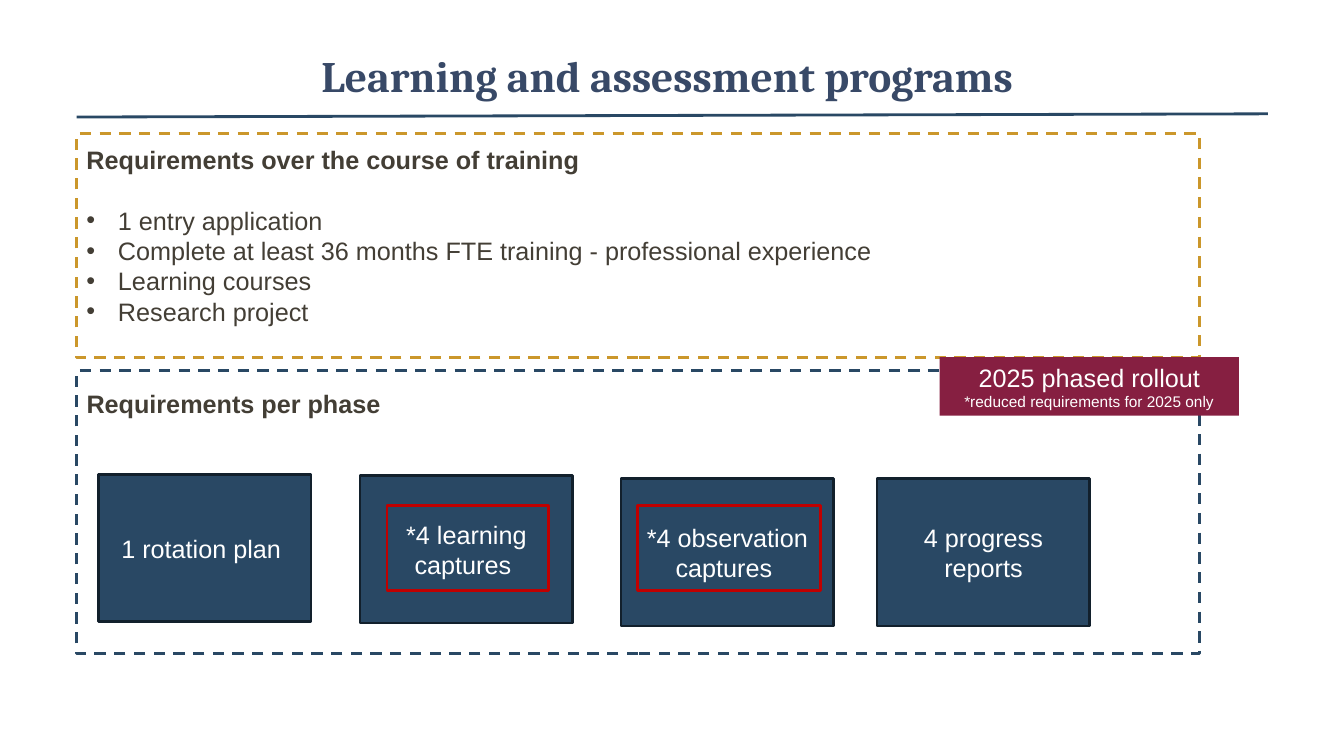
"""Build the slide on learning and assessment programs."""
import dataclasses
from typing import Any, Optional

import pptx
import pptx.dml.color
import pptx.enum.dml
import pptx.enum.shapes
import pptx.enum.text
import pptx.oxml.ns
import pptx.util
from lxml import etree

Pt = pptx.util.Pt
ALIGN = pptx.enum.text.PP_ALIGN
ANCHOR = pptx.enum.text.MSO_ANCHOR
COLORS = {
    "title": "384967", "navy": "294864", "edge": "12202C", "gold": "CB972B",
    "maroon": "861F41", "red": "C00000", "body": "433E35", "white": "FFFFFF",
}


@dataclasses.dataclass
class Line:
    """One paragraph of text and its look."""
    text: str
    size: float = 18
    color: str = "white"
    bold: bool = False
    font: str = "Arial"
    align: Any = ALIGN.CENTER
    bullet: bool = False
    before: float = 0


@dataclasses.dataclass
class Box:
    """A rectangle or text box, in points."""
    left: float
    top: float
    width: float
    height: float
    lines: tuple[Line, ...] = ()
    fill: Optional[str] = None
    edge: Optional[str] = None
    dashed: bool = False


def rgb(name: str) -> pptx.dml.color.RGBColor:
    """Return a named colour."""
    return pptx.dml.color.RGBColor.from_string(COLORS[name])


def set_format(target: Any, values: dict[str, Any]) -> None:
    """Set each attribute of the target from the values."""
    for name, value in values.items():
        setattr(target, name, value)


def place(shape: Any, box: Box) -> None:
    """Move and size a shape to its box."""
    set_format(shape, {name: Pt(getattr(box, name))
                       for name in ("left", "top", "width", "height")})


def add_bullet(para: Any) -> None:
    """Give a paragraph a hanging round bullet."""
    props = para._p.get_or_add_pPr()
    set_format_values = {"marL": str(Pt(22.5)), "indent": str(Pt(-22.5))}
    for name, value in set_format_values.items():
        props.set(name, value)
    for tag, key, value in (("a:buFont", "typeface", "Arial"), ("a:buChar", "char", "•")):
        etree.SubElement(props, pptx.oxml.ns.qn(tag)).set(key, value)


def write(frame: Any, lines: tuple[Line, ...], anchor: Any) -> None:
    """Write the lines into a text frame."""
    set_format(frame, {"word_wrap": True, "vertical_anchor": anchor,
                       "auto_size": pptx.enum.text.MSO_AUTO_SIZE.NONE})
    for index, line in enumerate(lines):
        para = frame.add_paragraph() if index else frame.paragraphs[0]
        para.alignment = line.align
        if line.before:
            para.space_before = Pt(line.before)
        if line.bullet:
            add_bullet(para)
        span = para.add_run()
        span.text = line.text
        set_format(span.font, {"name": line.font, "size": Pt(line.size), "bold": line.bold})
        span.font.color.rgb = rgb(line.color)


def add_box(page: Any, box: Box) -> None:
    """Draw a rectangle with its text."""
    shape = page.shapes.add_shape(pptx.enum.shapes.MSO_SHAPE.RECTANGLE, 0, 0, 0, 0)
    place(shape, box)
    shape.shadow.inherit = False
    if box.fill:
        shape.fill.solid()
        shape.fill.fore_color.rgb = rgb(box.fill)
    else:
        shape.fill.background()
    if box.edge:
        shape.line.color.rgb = rgb(box.edge)
        shape.line.width = Pt(2)
    else:
        shape.line.fill.background()
    if box.dashed:
        shape.line.dash_style = pptx.enum.dml.MSO_LINE.DASH
    if box.lines:
        write(shape.text_frame, box.lines, ANCHOR.MIDDLE)


def add_text(page: Any, box: Box) -> None:
    """Draw a plain text box."""
    shape = page.shapes.add_textbox(0, 0, 0, 0)
    place(shape, box)
    write(shape.text_frame, box.lines, ANCHOR.TOP)


def add_rule(page: Any) -> None:
    """Draw the line under the title."""
    rule = page.shapes.add_connector(pptx.enum.shapes.MSO_CONNECTOR.STRAIGHT,
                                     Pt(54.7), Pt(83.6), Pt(905.6), Pt(81.3))
    rule.line.color.rgb = rgb("navy")
    rule.line.width = Pt(2)
    etree.SubElement(rule._element.spPr, pptx.oxml.ns.qn("a:effectLst"))


def add_title(page: Any) -> None:
    """Place and format the title."""
    title = page.shapes.title
    place(title, Box(119.5, 20.9, 720.7, 65.5))
    set_format(title.text_frame, {"margin_left": Pt(5), "margin_right": Pt(5),
                                  "margin_top": Pt(2.9), "margin_bottom": Pt(2.9)})
    write(title.text_frame, (Line("Learning and assessment programs ", 31, "title",
                                  True, "Cambria"),), ANCHOR.MIDDLE)


def heading(text: str) -> Line:
    """Return a bold section heading."""
    return Line(text, color="body", bold=True, align=ALIGN.LEFT)


def task(left: float, top: float, text: str) -> Box:
    """Return a box for one task of a phase."""
    return Box(left, top, 152, 105.4, (Line(text),), "navy", "edge")


COURSE_ITEMS = (
    "1 entry application",
    "Complete at least 36 months FTE training - professional experience",
    "Learning courses",
    "Research project",
)
BOXES = (
    Box(54.7, 95.4, 802.3, 160, edge="gold", dashed=True),
    Box(54.7, 264.6, 802.3, 202.3, edge="navy", dashed=True),
    task(70.2, 338.8, "1 rotation plan "),
    task(257.2, 339.7, "*4 learning captures "),
    task(443.6, 341.8, "*4 observation captures "),
    task(626.5, 341.8, "4 progress reports"),
    Box(671.2, 255.1, 213.8, 41.9, (Line("2025 phased rollout"),
        Line("*reduced requirements for 2025 only", 11)), "maroon"),
    Box(276.5, 360.9, 115.6, 60.7, edge="red"),
    Box(455.5, 360.9, 130.6, 60.7, edge="red"),
)
TEXTS = (
    Box(54.7, 273.8, 480, 29, (heading("Requirements per phase"),)),
    Box(54.7, 99.8, 708.5, 138.5, (
        heading("Requirements over the course of training"),
        *(Line(item, color="body", align=ALIGN.LEFT, bullet=True,
               before=0 if index else 21.6)
          for index, item in enumerate(COURSE_ITEMS)))),
)


def main() -> None:
    """Build and save the deck."""
    deck = pptx.Presentation()
    set_format(deck, {"slide_width": Pt(960), "slide_height": Pt(540)})
    page = deck.slides.add_slide(deck.slide_layouts[5])
    add_title(page)
    add_rule(page)
    for box in BOXES:
        add_box(page, box)
    for box in TEXTS:
        add_text(page, box)
    deck.save("out.pptx")


if __name__ == "__main__":
    main()
